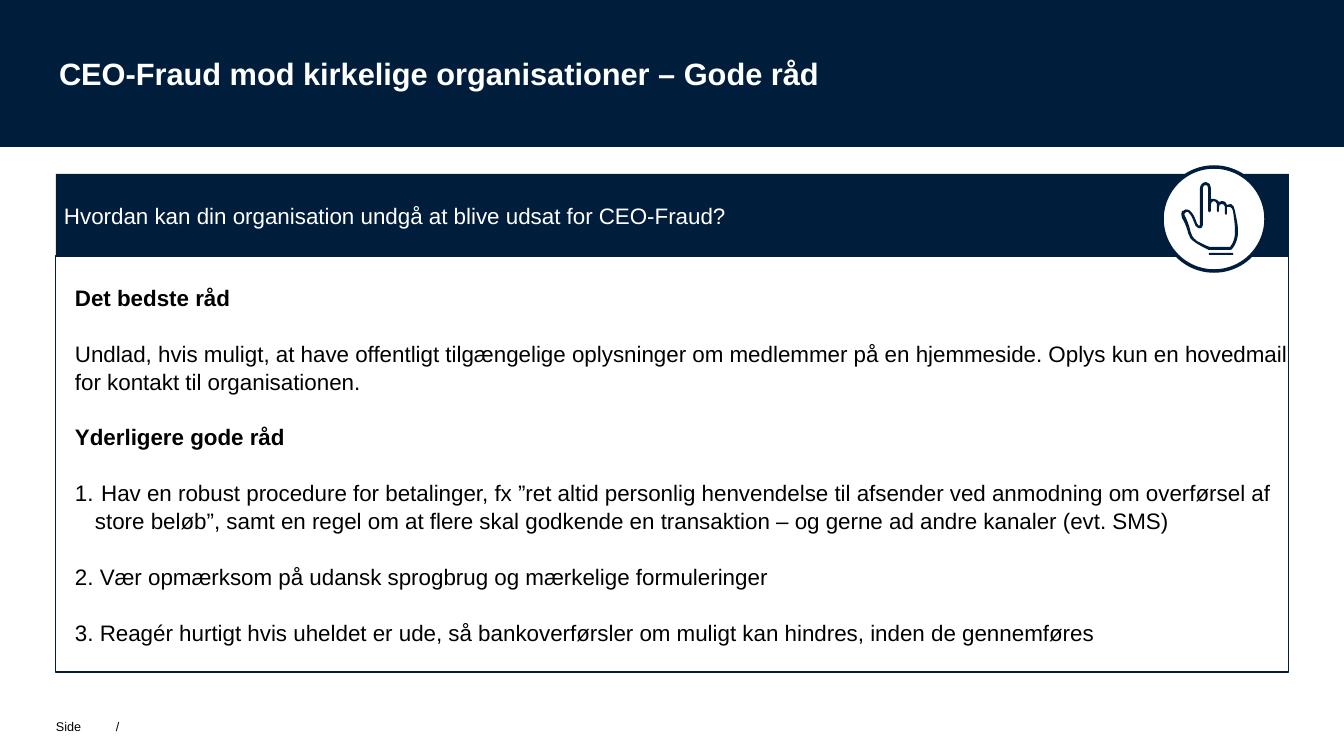
from lxml import etree
from pptx import Presentation
from pptx import util as u
from pptx.dml.color import RGBColor
from pptx.enum import shapes, text
from pptx.oxml.ns import qn

TITLE = "CEO-Fraud mod kirkelige organisationer – Gode råd"
QUESTION = "Hvordan kan din organisation undgå at blive udsat for CEO-Fraud?"
# text, bold, number, left margin px, first-line indent px
ADVICE = [
    ("Det bedste råd", True, None, 19, 0),
    ("Undlad, hvis muligt, at have offentligt tilgængelige oplysninger om medlemmer "
     "på en hjemmeside. Oplys kun en hovedmail for kontakt til organisationen.",
     False, None, 19, 0),
    ("Yderligere gode råd", True, None, 19, 0),
    (" Hav en robust procedure for betalinger, fx ”ret altid personlig henvendelse til "
     "afsender ved anmodning om overførsel af store beløb”, samt en regel om at flere skal "
     "godkende en transaktion – og gerne ad andre kanaler (evt. SMS)", False, 1, 39, -20),
    (" Vær opmærksom på udansk sprogbrug og mærkelige formuleringer", False, 2, 19, 0),
    (" Reagér hurtigt hvis uheldet er ude, så bankoverførsler om muligt kan hindres, "
     "inden de gennemføres", False, 3, 19, 0),
]
FOOTER = "Side\t/"

# Hand contours in px: a pair of numbers is a line, six numbers are a curve
HAND_OUTSIDE = [
    (28, 68), (50, 68), (51, 67), (51, 67, 57, 61, 57, 50), (57, 43, 56, 39, 55, 34),
    (55, 32, 55, 31, 54, 29), (54, 26, 52, 23, 50, 22), (48, 22, 47, 23, 46, 23),
    (45, 20, 44, 19, 41, 19), (40, 19, 39, 20, 38, 20), (37, 18, 35, 17, 33, 17),
    (32, 17, 31, 17, 30, 17), (30, 17, 30, 7, 30, 6), (30, 3, 28, 0, 25, 0),
    (22, 0, 19, 3, 19, 6), (19, 41), (19, 43, 19, 43, 19, 43), (19, 44, 18, 44, 18, 44),
    (15, 43, 15, 33, 8, 28), (6, 27, 3, 27, 2, 29), (1, 29), (0, 31, 0, 33, 1, 36),
    (10, 51, 4, 54, 15, 61), (23, 66, 28, 68, 28, 68),
]
HAND_INSIDE = [
    (4, 34), (3, 33, 3, 32, 4, 31), (4, 30, 6, 30, 7, 30), (13, 35, 13, 45, 17, 46),
    (20, 47, 22, 46, 22, 41), (22, 6), (22, 4, 23, 3, 25, 3), (26, 3, 27, 4, 27, 6),
    (27, 29), (27, 31, 30, 31, 30, 29), (30, 22), (30, 21, 31, 19, 33, 19),
    (34, 19, 36, 21, 36, 22), (36, 29), (36, 31, 38, 31, 38, 29), (38, 25),
    (38, 23, 39, 22, 41, 22), (42, 22, 44, 23, 44, 25), (44, 32),
    (44, 33, 46, 33, 46, 32), (46, 25), (46, 25, 48, 25, 49, 25),
    (50, 25, 52, 27, 52, 29), (53, 37, 54, 41, 54, 50), (54, 60, 49, 65, 49, 65),
    (29, 65), (29, 65, 25, 64, 16, 59), (7, 52, 12, 50, 4, 34),
]
HAND_UNDERLINE = [(28, 71), (52, 71), (52, 73), (28, 73), (28, 71)]
HAND = [HAND_OUTSIDE, HAND_INSIDE, HAND_UNDERLINE]

NAVY = RGBColor(0x00, 0x1E, 0x3C)
WHITE = RGBColor(0xFF, 0xFF, 0xFF)
BLACK = RGBColor(0x00, 0x00, 0x00)
FONT = "Arial"
SLIDE_W, SLIDE_H = 1344, 756
PANEL_LEFT, PANEL_W = 56, 1233
PX = u.Inches(1) / 100.8


def px(length):
    return u.Emu(round(length * PX))


def paint(shape, fill=None, line=None, line_pt=0.75):
    shape.shadow.inherit = False
    if fill is None:
        shape.fill.background()
    else:
        shape.fill.solid()
        shape.fill.fore_color.rgb = fill
    if line is None:
        shape.line.fill.background()
    else:
        shape.line.color.rgb = line
        shape.line.width = u.Pt(line_pt)
    return shape


def add_panel(slide, kind, box, **look):
    return paint(slide.shapes.add_shape(kind, *map(px, box)), **look)


def set_frame(shape, anchor, left=0, top=0):
    frame = shape.text_frame
    frame.word_wrap = True
    frame.vertical_anchor = anchor
    frame.margin_left, frame.margin_top = px(left), px(top)
    frame.margin_right = frame.margin_bottom = 0
    return frame


def write(paragraph, wording, *, size, color, bold=False, spacing=None, before=None,
          margin=0, indent=0, number=None, tab=None):
    props = paragraph._p.get_or_add_pPr()
    props.set("marL", str(px(margin)))
    props.set("indent", str(px(indent)))
    if number:
        etree.SubElement(props, qn("a:buAutoNum"), type="arabicPeriod", startAt=str(number))
    if tab:
        props.set("defTabSz", str(px(tab)))
        stops = etree.SubElement(props, qn("a:tabLst"))
        etree.SubElement(stops, qn("a:tab"), pos=str(px(tab)), algn="l")
    paragraph.alignment = text.PP_ALIGN.LEFT
    if spacing:
        paragraph.line_spacing = spacing
    if before:
        paragraph.space_before = u.Pt(before)
    run = paragraph.add_run()
    run.text = wording
    run.font.name, run.font.size, run.font.bold = FONT, u.Pt(size), bold
    run.font.color.rgb = color


def bend(segment, step):
    """Turn a straight segment into the cubic curve that ends at the same point."""
    end = segment[0]
    segment.tag_name = None
    curve = etree.Element(qn("a:cubicBezTo"))
    for x, y in (step[0:2], step[2:4]):
        etree.SubElement(curve, qn("a:pt"),
                         x=str(int(end.get("x")) + px(x - step[4])),
                         y=str(int(end.get("y")) + px(y - step[5])))
    curve.append(end)
    segment.getparent().replace(segment, curve)


def add_hand(slide, left, top):
    pen = slide.shapes.build_freeform(*map(px, HAND[0][0]), scale=1.0)
    for i, contour in enumerate(HAND):
        if i:
            pen.move_to(*map(px, contour[0]))
        pen.add_line_segments([tuple(map(px, step[-2:])) for step in contour[1:]], close=True)
    hand = paint(pen.convert_to_shape(px(left), px(top)), fill=NAVY)
    segments = list(hand._element.iter(qn("a:lnTo")))
    steps = [step for contour in HAND for step in contour[1:]]
    for segment, step in zip(segments, steps):
        if len(step) == 6:
            bend(segment, step)


def main():
    prs = Presentation()
    prs.slide_width, prs.slide_height = px(SLIDE_W), px(SLIDE_H)
    slide = prs.slides.add_slide(prs.slide_layouts[6])
    rect = shapes.MSO_SHAPE.RECTANGLE
    middle = text.MSO_ANCHOR.MIDDLE

    footer = slide.shapes.add_textbox(*map(px, (56, 708, 149, 26)))
    write(set_frame(footer, text.MSO_ANCHOR.BOTTOM).paragraphs[0], FOOTER,
          size=9, color=BLACK, tab=60)

    question = add_panel(slide, rect, (PANEL_LEFT, 174, PANEL_W, 82), fill=NAVY)
    write(set_frame(question, middle, left=8).paragraphs[0], QUESTION,
          size=16, color=WHITE, spacing=1.04)

    advice = add_panel(slide, rect, (PANEL_LEFT, 256, PANEL_W, 416), line=NAVY)
    frame = set_frame(advice, text.MSO_ANCHOR.TOP, top=27)
    for i, (wording, bold, number, margin, indent) in enumerate(ADVICE):
        paragraph = frame.add_paragraph() if i else frame.paragraphs[0]
        write(paragraph, wording, size=16, color=BLACK, bold=bold, spacing=1.04,
              before=19.9 if i else None, margin=margin, indent=indent, number=number)

    add_panel(slide, shapes.MSO_SHAPE.OVAL, (1162, 167, 104, 104),
              fill=WHITE, line=NAVY, line_pt=2.5)
    add_hand(slide, 1181, 182)

    title = add_panel(slide, rect, (0, 0, SLIDE_W, 147), fill=NAVY)
    write(set_frame(title, middle).paragraphs[0], TITLE,
          size=22, color=WHITE, bold=True, margin=59)

    prs.save("out.pptx")


if __name__ == "__main__":
    main()
